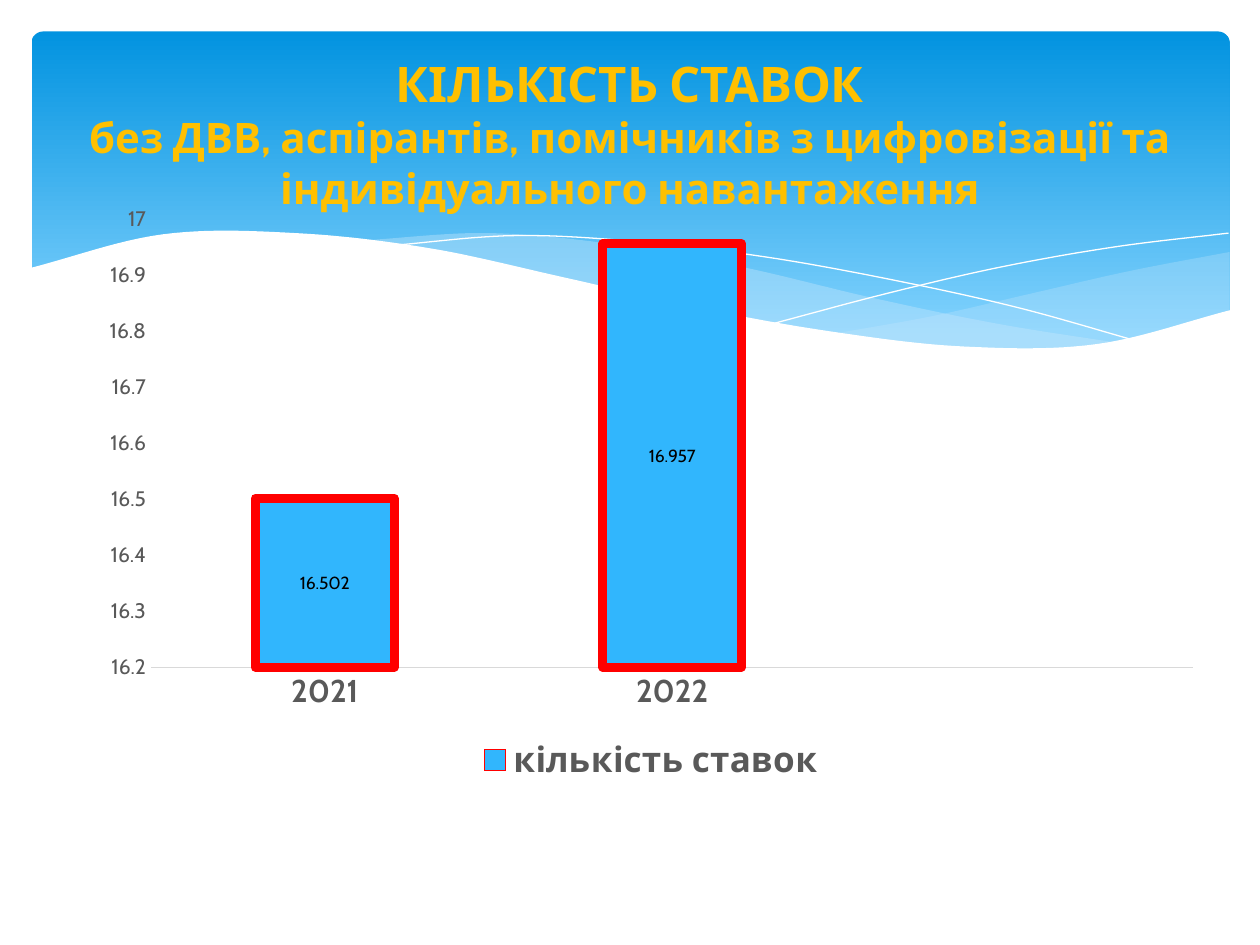
from lxml import etree
from pptx import Presentation
from pptx.chart.data import CategoryChartData
from pptx.dml.color import RGBColor
from pptx.enum.chart import XL_CHART_TYPE, XL_LEGEND_POSITION, XL_TICK_MARK
from pptx.enum.shapes import MSO_SHAPE
from pptx.enum.text import MSO_ANCHOR, PP_ALIGN
from pptx.oxml.ns import qn
from pptx.util import Inches, Pt

FONT = "Cabin"
WHITE, PALE_BLUE, GREY = "FFFFFF", "C6E7FC", "595959"
STEPS_PER_SPAN = 12


def color(hex_string):
    return RGBColor.from_string(hex_string)


def smooth_curve(left, right, heights):
    """Return points of a Catmull-Rom curve through heights evenly spaced from left to right."""
    before = 2 * heights[0] - heights[1]
    after = 2 * heights[-1] - heights[-2]
    padded = [before, *heights, after]
    spans = len(heights) - 1
    points = []
    for step in range(spans * STEPS_PER_SPAN + 1):
        span = min(step // STEPS_PER_SPAN, spans - 1)
        t = step / STEPS_PER_SPAN - span
        a, b, c, d = padded[span:span + 4]
        y = b + t / 2 * (c - a + t * (2 * a - 5 * b + 4 * c - d + t * (3 * (b - c) + d - a)))
        x = left + (right - left) * step / (spans * STEPS_PER_SPAN)
        points.append((Inches(x), Inches(y)))
    return points


presentation = Presentation()
presentation.slide_width = Inches(10)
presentation.slide_height = Inches(7.5)
slide = presentation.slides.add_slide(presentation.slide_layouts[6])

# Gradient banner
banner = slide.shapes.add_shape(
    MSO_SHAPE.ROUNDED_RECTANGLE, Inches(0.25), Inches(0.25), Inches(9.51), Inches(2.7))
banner.adjustments[0] = 0.034
banner.shadow.inherit = False
banner.line.fill.background()
banner.fill.gradient()
banner.fill.gradient_angle = 270
for stop, (position, shade) in zip(banner.fill.gradient_stops, [(0, "0293E0"), (0.9, "83D3FE")]):
    stop.position = position
    stop.color.rgb = color(shade)

# Filled waves: left, right, heights of the upper edge, heights of the lower edge, fill, opacity
right_wave = (6.61, 9.76, [2.65, 2.51, 2.33, 2.15, 2], [2.65, 2.74, 2.78, 2.7, 2.47],
              PALE_BLUE, 29)
middle_wave = (2.86, 8.93, [1.91, 1.85, 1.94, 2.12, 2.36, 2.57, 2.73],
               [1.91, 2.08, 2.31, 2.53, 2.69, 2.78, 2.73], PALE_BLUE, 40)
white_wave = (0.23, 9.77, [2.13, 1.86, 1.85, 1.97, 2.2, 2.44, 2.63, 2.75, 2.73, 2.46],
              [3.29, 3.29], WHITE, 100)

# Hairlines have no lower edge and no fill
falling_line = (3.09, 9.07, [1.95, 1.87, 1.92, 2.04, 2.22, 2.44, 2.72], None, None, None)
rising_line = (6.13, 9.75, [2.57, 2.33, 2.12, 1.96, 1.85], None, None, None)

for left, right, upper, lower, fill, opacity in [
        right_wave, middle_wave, falling_line, rising_line, white_wave]:
    outline = smooth_curve(left, right, upper)
    if lower:
        outline += reversed(smooth_curve(left, right, lower))
    builder = slide.shapes.build_freeform(*outline[0], scale=1.0)
    builder.add_line_segments(outline[1:], close=bool(lower))
    wave = builder.convert_to_shape()
    wave.shadow.inherit = False
    if lower:
        wave.line.fill.background()
        wave.fill.solid()
        wave.fill.fore_color.rgb = color(fill)
        fill_color = wave.element.spPr.find(qn("a:solidFill")).find(qn("a:srgbClr"))
        etree.SubElement(fill_color, qn("a:alpha"), val=str(opacity * 1000))
    else:
        wave.fill.background()
        wave.line.color.rgb = color(WHITE)
        wave.line.width = Pt(0)

# Column chart
chart_data = CategoryChartData()
chart_data.categories = ["2021", "2022", ""]
chart_data.add_series("кількість ставок", [16.502, 16.957, None])
chart = slide.shapes.add_chart(
    XL_CHART_TYPE.COLUMN_STACKED, Inches(0.69), Inches(1.55), Inches(8.96), Inches(4.71),
    chart_data).chart
chart.has_title = False
chart.has_legend = True
chart.legend.position = XL_LEGEND_POSITION.BOTTOM
chart.legend.include_in_layout = False

category_axis, value_axis = chart.category_axis, chart.value_axis
for axis in (category_axis, value_axis):
    axis.major_tick_mark = axis.minor_tick_mark = XL_TICK_MARK.NONE
    axis.has_major_gridlines = False
category_axis.format.line.color.rgb = color("D9D9D9")
category_axis.format.line.width = Pt(0.75)
value_axis.format.line.fill.background()
value_axis.minimum_scale, value_axis.maximum_scale = 16.2, 17
value_axis.major_unit = 0.1

plot = chart.plots[0]
plot.gap_width, plot.overlap = 150, 100
plot.vary_by_categories = False
series = plot.series[0]
series.format.fill.solid()
series.format.fill.fore_color.rgb = color("31B6FD")
series.format.line.color.rgb = color("FF0000")
series.format.line.width = Pt(5)
labels = series.data_labels
labels.show_value = True

for font, size, shade, bold in [
        (chart.font, 10, "000000", False),
        (labels.font, 10, "000000", False),
        (category_axis.tick_labels.font, 18, GREY, True),
        (value_axis.tick_labels.font, 12, GREY, False),
        (chart.legend.font, 20, GREY, True)]:
    font.name, font.size, font.bold = FONT, Pt(size), bold
    font.color.rgb = color(shade)

# Title
title = slide.shapes.add_textbox(Inches(0.5), Inches(0.37), Inches(9), Inches(1.37))
title.text_frame.word_wrap = True
title.text_frame.vertical_anchor = MSO_ANCHOR.MIDDLE
paragraph = title.text_frame.paragraphs[0]
paragraph.alignment = PP_ALIGN.CENTER
paragraph.font.name, paragraph.font.bold = FONT, True
paragraph.font.color.rgb = color("FFC000")
heading = paragraph.add_run()
heading.text = "КІЛЬКІСТЬ СТАВОК"
heading.font.size = Pt(28)
paragraph.add_line_break()
subheading = paragraph.add_run()
subheading.text = "без ДВВ, аспірантів, помічників з цифровізації та індивідуального навантаження"
subheading.font.size = Pt(24)

presentation.save("out.pptx")
